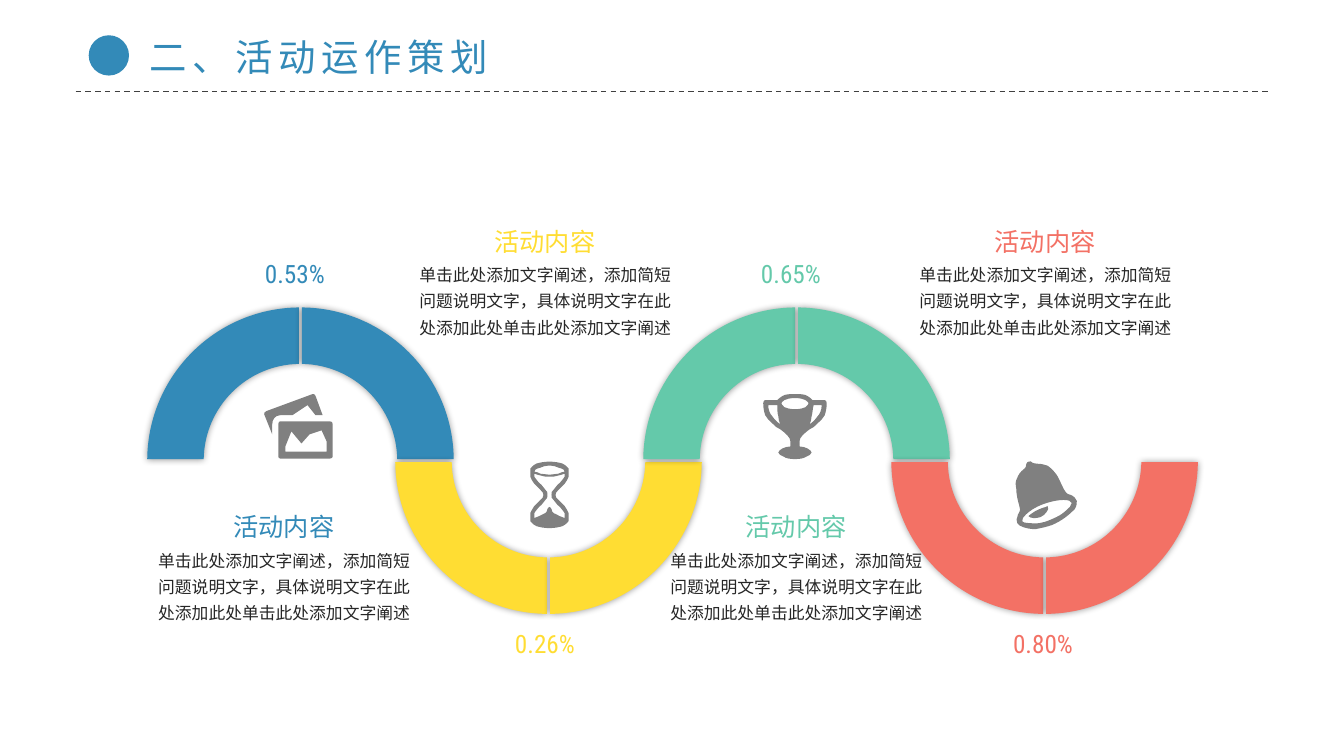
import math

import pptx
import pptx.dml.color
import pptx.enum.dml
import pptx.enum.shapes
import pptx.enum.text
import pptx.oxml
import pptx.oxml.ns
import pptx.util

# Content
TITLE = "二、活动运作策划"
HEADING = "活动内容"
DESCRIPTION = "单击此处添加文字阐述，添加简短问题说明文字，具体说明文字在此处添加此处单击此处添加文字阐述"
BLUE, GREY, DARK = "338AB8", "808080", "262626"
HEADING_FONT, BODY_FONT, NUMBER_FONT = "Noto Sans CJK JP", "Noto Sans CJK SC", "Roboto Condensed"

# Icon outlines in hundredths of an inch: pairs are corners, sixes are Bezier curves.
# A contour that begins on the icon's axis is one half, and is mirrored.
PHOTOS = [
    [(57, 36), (45, 40), (37, 49), (27, 37), (21, 52), (21, 57), (62, 57), (62, 47)],
    [(16, 27), (65, 27), (67, 27, 68, 28, 68, 30), (68, 62), (68, 63, 67, 64, 65, 64),
     (16, 64), (15, 64, 14, 63, 14, 62), (14, 30), (14, 28, 15, 27, 16, 27)],
    [(48, 0), (49, 0, 51, 0, 51, 2), (58, 21), (51, 21), (43, 11), (28, 21), (16, 21),
     (11, 21, 8, 25, 8, 30), (8, 40), (0, 20), (0, 19, 0, 18, 2, 17)],
]
HOURGLASS = [
    [(19, 0), (24, 0, 29, 1, 32, 2), (36, 4, 37, 6, 38, 7), (38, 15),
     (37, 17, 36, 20, 34, 22), (32, 24, 30, 26, 28, 28), (26, 30, 25, 31, 25, 33),
     (25, 35, 26, 37, 28, 38), (30, 40, 32, 42, 34, 44), (36, 47, 37, 49, 38, 51),
     (38, 59), (37, 60, 36, 62, 32, 64), (29, 65, 24, 66, 19, 66)],
    [(19, 4), (23, 4, 26, 5, 28, 6), (31, 7, 32, 7, 33, 8), (34, 10),
     (32, 10, 30, 11, 28, 12), (25, 12, 22, 13, 19, 13)],
    [(19, 15), (22, 15, 25, 15, 27, 14), (30, 13, 32, 13, 34, 12), (34, 15),
     (33, 16, 33, 17, 31, 19), (30, 20, 29, 22, 27, 23), (26, 25, 24, 26, 23, 28),
     (21, 29, 21, 31, 21, 33), (21, 35, 21, 37, 23, 38), (24, 40, 26, 41, 27, 43),
     (29, 44, 30, 46, 31, 47), (33, 49, 33, 50, 34, 51), (34, 56),
     (32, 55, 31, 55, 29, 54), (27, 53, 25, 52, 23, 51), (22, 50, 21, 49, 21, 47),
     (20, 46, 20, 45, 19, 45)],
]
TROPHY = [
    [(31.5, 0), (37, 0, 41, 0, 44, 2), (46, 3, 48, 5, 49, 6), (61, 6),
     (62, 6, 63, 7, 63, 9), (63, 14, 62, 18, 61, 21), (59, 24, 57, 27, 54, 29),
     (51, 32, 49, 34, 46, 35), (43, 37, 41, 39, 39, 41), (37, 43, 36, 45, 36, 47),
     (36, 52), (39, 52, 42, 53, 44, 54), (46, 55, 48, 57, 48, 58),
     (47, 60, 46, 61, 43, 62), (40, 64, 36, 64.5, 31.5, 64.5)],
    [(31.5, 4), (37, 4, 40, 5, 42, 6), (44, 7, 45, 9, 45, 9),
     (45, 10, 44, 11, 42, 13), (40, 14, 37, 15, 31.5, 15)],
    [(50, 11), (49, 15, 49, 19, 48, 22), (48, 25, 47, 28, 46, 30),
     (49, 28, 52, 25, 54, 22), (56, 20, 58, 16, 58, 11)],
    [(5, 11), (5, 16, 7, 20, 9, 22), (11, 25, 14, 28, 17, 30),
     (16, 28, 15, 25, 15, 22), (14, 19, 14, 15, 14, 11)],
]
BELL = [
    [(32, 44), (33, 46, 33, 48, 31, 50), (30, 52, 27, 54, 25, 55),
     (22, 56, 20, 56, 18, 56), (16, 56, 14, 55, 13, 54), (15, 52, 17, 51, 20, 49),
     (22, 48, 26, 46, 30, 45)],
    [(48, 38), (43, 38, 37, 39, 28, 42), (20, 45, 14, 49, 11, 52), (8, 55, 6, 57, 7, 59),
     (7, 60, 10, 61, 15, 61), (20, 62, 27, 61, 34, 58), (39, 56, 43, 54, 46, 52),
     (50, 49, 52, 47, 54, 45), (55, 43, 56, 41, 56, 41), (55, 39, 53, 38, 48, 38)],
    [(13, 0), (15, -1, 16, 0, 17, 1), (17, 1, 19, 2, 21, 2), (26, 2, 29, 3, 32, 4),
     (35, 6, 38, 9, 41, 13), (43, 16, 45, 21, 48, 27), (50, 30, 51, 32, 52, 32),
     (54, 33, 56, 33, 57, 34), (58, 35, 60, 36, 61, 39), (61, 41, 61, 44, 59, 47),
     (57, 49, 54, 52, 50, 55), (46, 58, 41, 61, 36, 63), (30, 65, 25, 66, 20, 67),
     (15, 67, 11, 66, 8, 65), (5, 64, 3, 63, 2, 61), (1, 58, 1, 56, 2, 55),
     (2, 53, 3, 52, 4, 50), (5, 49, 5, 47, 4, 44), (2, 37, 1, 32, 1, 27),
     (0, 23, 0, 19, 2, 16), (3, 13, 5, 10, 9, 7), (10, 6, 11, 5, 11, 2), (12, 1, 12, 0, 13, 0)],
]
# Colour, share, icon, icon left, icon axis, left of share, left of description
STAGES = [
    (BLUE, "0.53%", PHOTOS, 2.62, None, 2.51, 1.47),
    ("FFDD33", "0.26%", HOURGLASS, 5.26, 19, 4.99, 4.06),
    ("64C9AA", "0.65%", TROPHY, 7.57, 31.5, 7.43, 6.55),
    ("F37165", "0.80%", BELL, 10.07, None, 9.93, 9.02),
]

# Layout
FIRST_CENTRE, CENTRE_STEP, WAVE_Y = 2.98, 2.46, 4.57
OUTER, INNER, HALF_GAP = 1.52, 0.96, 0.015
# Tops of share, heading, description and icon for stages over and under the wave's middle
ROWS = [(2.51, 4.96, 5.35, 3.91), (6.18, 2.14, 2.52, 4.58)]

inches, qualified = pptx.util.Inches, pptx.oxml.ns.qn
presentation = pptx.Presentation()
presentation.slide_width, presentation.slide_height = inches(13.33), inches(7.5)
slide = presentation.slides.add_slide(presentation.slide_layouts[5])


def colour(code):
    return pptx.dml.color.RGBColor.from_string(code)


def paint(shape, code):
    shape.shadow.inherit = False
    shape.fill.solid()
    shape.fill.fore_color.rgb = colour(code)
    shape.line.fill.background()


def set_all(target, values):
    for name, value in values.items():
        setattr(target, name, value)


def write(shape, box, text, size, font, code, align="LEFT", spacing=None, wrap=True):
    set_all(shape, dict(zip(("left", "top", "width", "height"), map(inches, box))))
    set_all(shape.text_frame, {"word_wrap": wrap, "auto_size": pptx.enum.text.MSO_AUTO_SIZE.NONE,
                               "vertical_anchor": pptx.enum.text.MSO_ANCHOR.TOP})
    paragraph = shape.text_frame.paragraphs[0]
    set_all(paragraph, {"alignment": getattr(pptx.enum.text.PP_ALIGN, align), "line_spacing": spacing})
    run = paragraph.add_run()
    run.text = text
    set_all(run.font, {"size": pptx.util.Pt(size), "name": font, "bold": False})
    run.font.color.rgb = colour(code)
    properties = run._r.get_or_add_rPr()
    properties.find(qualified("a:latin")).addnext(
        properties.makeelement(qualified("a:ea"), {"typeface": font}))
    return properties


def add_text(*args, **options):
    write(slide.shapes.add_textbox(0, 0, 0, 0), *args, **options)


def pairs(step):
    return list(zip(step[::2], step[1::2]))


def add_outline(contours, code, left=0, top=0, unit=1):
    def place(point):
        return inches(left + point[0] * unit), inches(top + point[1] * unit)

    builder = slide.shapes.build_freeform(*place(contours[0][0]))
    for contour in contours:
        if contour is not contours[0]:
            builder.move_to(*place(contour[0]))
        builder.add_line_segments([place(p) for step in contour[1:] for p in pairs(step)], close=True)
    shape = builder.convert_to_shape()
    # Join each run of three control points into one curve
    segments = iter(list(shape._element.iter(qualified("a:lnTo"))))
    for step in (step for contour in contours for step in contour[1:]):
        first, *others = [next(segments) for _ in pairs(step)]
        if others:
            first.tag = qualified("a:cubicBezTo")
        for other in others:
            first.append(other[0])
            other.getparent().remove(other)
    paint(shape, code)
    return shape


def complete(contour, axis):
    if contour[0][0] != axis:
        return contour
    mirrored = []
    for before, step in reversed(list(zip(contour, contour[1:]))):
        points = (pairs(before)[-1:] + pairs(step))[-2::-1]
        mirrored.append(tuple(value for x, y in points for value in (2 * axis - x, y)))
    return contour + mirrored


def add_quarter(centre, side, direction, code):
    arcs = []
    for radius in (OUTER, INNER):
        start = math.asin(HALF_GAP / radius)
        end = math.pi / 2 - start
        reach = 4 / 3 * math.tan((end - start) / 4)
        arcs.append([(centre + side * radius * (math.cos(a) - pull * math.sin(a)),
                      WAVE_Y + direction * radius * (math.sin(a) + pull * math.cos(a)))
                     for a, pull in ((start, 0), (start, reach), (end, -reach), (end, 0))])
    outer, inner = arcs[0], arcs[1][::-1]
    shape = add_outline([[outer[0], sum(outer[1:], ()), inner[0], sum(inner[1:], ())]], code)
    shadow = pptx.oxml.parse_xml(
        f'<a:outerShdw {pptx.oxml.ns.nsdecls("a")} blurRad="{pptx.util.Pt(5)}" dist="0" dir="0" '
        'algn="ctr" rotWithShape="0"><a:srgbClr val="000000"><a:alpha val="40000"/>'
        '</a:srgbClr></a:outerShdw>')
    shape._element.spPr.find(qualified("a:effectLst")).append(shadow)


# Header
rule = slide.shapes.add_connector(pptx.enum.shapes.MSO_CONNECTOR.STRAIGHT,
                                  inches(0.75), inches(0.91), inches(12.58), inches(0.91))
rule.line.color.rgb = colour("404040")
set_all(rule.line, {"width": pptx.util.Pt(1), "dash_style": pptx.enum.dml.MSO_LINE.DASH})
rule._element.spPr.append(pptx.oxml.parse_xml(f'<a:effectLst {pptx.oxml.ns.nsdecls("a")}/>'))
dot = slide.shapes.add_shape(pptx.enum.shapes.MSO_SHAPE.OVAL, *map(inches, (0.88, 0.35, 0.4, 0.4)))
paint(dot, BLUE)
title_run = write(slide.shapes.title, (1.38, 0.29, 3.64, 0.55), TITLE, 26.7, HEADING_FONT, BLUE, wrap=False)
title_run.set("spc", "400")

# Wave: each stage is a half ring made of two quarters
for index, (code, *_) in enumerate(STAGES):
    for side in (-1, 1):
        add_quarter(FIRST_CENTRE + index * CENTRE_STEP, side, 1 if index % 2 else -1, code)

# Icons and text
for index, (code, share, icon, icon_left, axis, share_left, text_left) in enumerate(STAGES):
    share_top, heading_top, text_top, icon_top = ROWS[index % 2]
    add_outline([complete(contour, axis) for contour in icon], GREY, icon_left, icon_top, 0.01)
    add_text((share_left, share_top, 0.83, 0.4), share, 18, NUMBER_FONT, code, "CENTER", wrap=False)
    add_text((text_left, text_top, 2.71, 0.89), DESCRIPTION, 12, BODY_FONT, DARK, spacing=1.3)
    add_text((text_left + 0.12, heading_top, 2.45, 0.43), HEADING, 18, HEADING_FONT, code, "CENTER", 1.2)

presentation.save("out.pptx")
